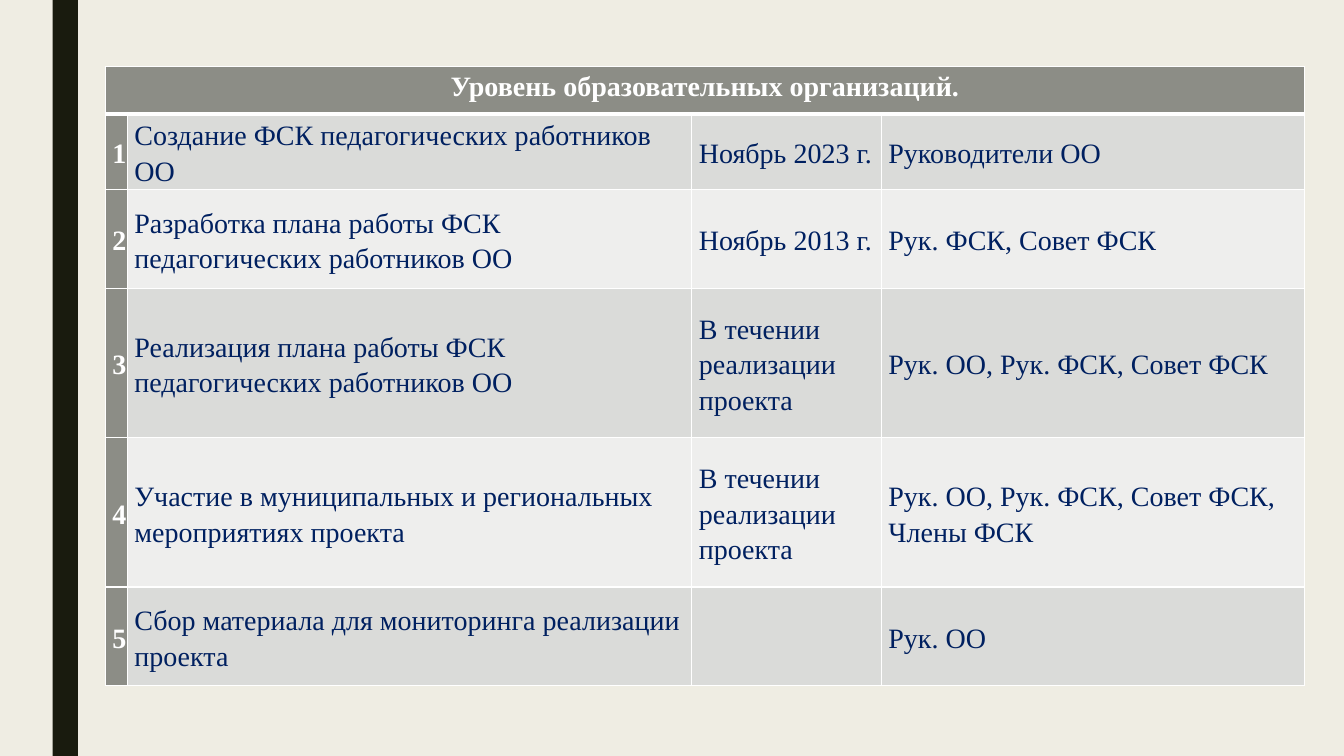
from lxml.etree import SubElement
from pptx import Presentation
from pptx.dml.color import RGBColor
from pptx.enum.shapes import MSO_SHAPE
from pptx.enum.text import MSO_ANCHOR, PP_ALIGN
from pptx.oxml.ns import qn
from pptx.util import Pt

COLORS = {
    "back": "EFEDE3",
    "bar": "191B0E",
    "head": "8C8D86",
    "odd": "DADBD9",
    "even": "EEEEED",
    "ink": "002060",
    "white": "FFFFFF",
}
HEAD = "Уровень образовательных организаций."
TASKS = [
    ("Создание ФСК педагогических работников ОО", "Ноябрь 2023 г.", "Руководители ОО"),
    ("Разработка плана работы ФСК педагогических работников ОО",
     "Ноябрь 2013 г.", "Рук. ФСК, Совет ФСК"),
    ("Реализация плана работы ФСК педагогических работников ОО",
     "В течении реализации проекта", "Рук. ОО, Рук. ФСК, Совет ФСК"),
    ("Участие в муниципальных и региональных мероприятиях проекта",
     "В течении реализации проекта", "Рук. ОО, Рук. ФСК, Совет ФСК, Члены ФСК"),
    ("Сбор материала для мониторинга реализации проекта", "", "Рук. ОО"),
]
WIDTHS = [15.8, 403.2, 135.4, 302.4]
HEIGHTS = [33.8, 54, 70.6, 106.6, 106.6, 70.6]


def paint(fill, name):
    """Fill solidly with a named colour."""
    fill.solid()
    fill.fore_color.rgb = RGBColor.from_string(COLORS[name])


def add_bar(slide):
    """Draw the dark bar at the left edge."""
    bar = slide.shapes.add_shape(MSO_SHAPE.RECTANGLE, Pt(37.6), 0, Pt(18), Pt(540))
    bar.shadow.inherit = False
    paint(bar.fill, "bar")
    bar.line.fill.background()


def add_edges(cell, top, base):
    """Give a cell white borders."""
    props = cell._tc.get_or_add_tcPr()
    for side, width in zip("LRTB", (1, 1, top, base)):
        line = SubElement(props, qn(f"a:ln{side}"), w=str(Pt(width)))
        fill = SubElement(line, qn("a:solidFill"))
        SubElement(fill, qn("a:srgbClr"), val=COLORS["white"])


def fill_cell(cell, text, shade, strong, anchor=MSO_ANCHOR.MIDDLE):
    """Shade a cell and write its text."""
    paint(cell.fill, shade)
    cell.vertical_anchor = anchor
    cell.margin_left = cell.margin_right = Pt(5)
    cell.margin_top = cell.margin_bottom = 0
    para = cell.text_frame.paragraphs[0]
    para.alignment = PP_ALIGN.CENTER if strong else PP_ALIGN.LEFT
    para.line_spacing = 1.15
    if text:
        run = para.add_run()
        run.text = text
        font = run.font
        font.name, font.size, font.bold = "Times New Roman", Pt(20), strong
        font.color.rgb = RGBColor.from_string(COLORS["white" if strong else "ink"])


def add_plan(slide):
    """Build the table of tasks, dates and people."""
    frame = slide.shapes.add_table(
        len(HEIGHTS), len(WIDTHS), Pt(75.2), Pt(47.7), Pt(sum(WIDTHS)), Pt(sum(HEIGHTS)))
    table = frame.table
    for col, width in zip(table.columns, WIDTHS):
        col.width = Pt(width)
    for index, height in enumerate(HEIGHTS):
        table.rows[index].height = Pt(height)
        for cell in table.rows[index].cells:
            add_edges(cell, 3 if index == 1 else 1, 3 if index == 0 else 1)
    table.cell(0, 0).merge(table.cell(0, len(WIDTHS) - 1))
    fill_cell(table.cell(0, 0), HEAD, "head", True, MSO_ANCHOR.TOP)
    for row, task in enumerate(TASKS, 1):
        fill_cell(table.cell(row, 0), str(row), "head", True)
        for col, text in enumerate(task, 1):
            fill_cell(table.cell(row, col), text, "odd" if row % 2 else "even", False)


def main():
    """Build and save the slide."""
    deck = Presentation()
    deck.slide_width, deck.slide_height = Pt(960), Pt(540)
    slide = deck.slides.add_slide(deck.slide_layouts[6])
    paint(slide.background.fill, "back")
    add_bar(slide)
    add_plan(slide)
    deck.save("out.pptx")


if __name__ == "__main__":
    main()
